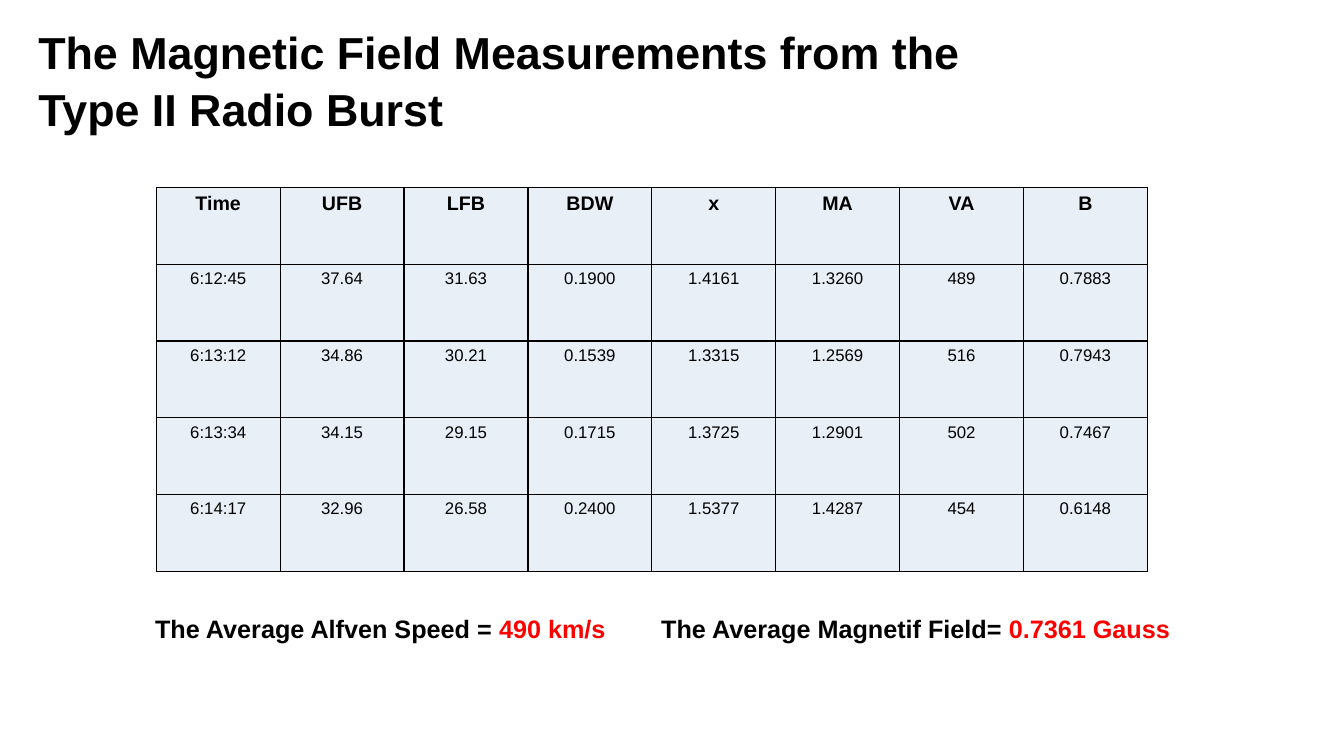
from lxml.etree import SubElement
from pptx import Presentation
from pptx.dml.color import RGBColor as Color
from pptx.enum.text import MSO_ANCHOR as Anchor, MSO_AUTO_SIZE as AutoSize, PP_ALIGN as Align
from pptx.oxml.ns import qn
from pptx.util import Inches, Pt

COLORS = {"text": "000000", "value": "FF0000", "cell": "E9EFF7", "border": "000000"}
TITLE = "The Magnetic Field Measurements from the Type II Radio Burst"
MEASUREMENTS = [
    ["Time", "UFB", "LFB", "BDW", "x", "MA", "VA", "B"],
    ["6:12:45", "37.64", "31.63", "0.1900", "1.4161", "1.3260", "489", "0.7883"],
    ["6:13:12", "34.86", "30.21", "0.1539", "1.3315", "1.2569", "516", "0.7943"],
    ["6:13:34", "34.15", "29.15", "0.1715", "1.3725", "1.2901", "502", "0.7467"],
    ["6:14:17", "32.96", "26.58", "0.2400", "1.5377", "1.4287", "454", "0.6148"],
]


class SlideBuilder:
    """Holds the style and the current slide."""

    font_name = "Arial"

    def __init__(self, slide):
        self.slide = slide

    def style(self, font, size, bold, color="text"):
        font.name = self.font_name
        font.size = Pt(size)
        font.bold = bold
        font.color.rgb = Color.from_string(COLORS[color])

    def title(self, text, left, top, width, height):
        shape = self.slide.shapes.title
        shape.left, shape.top = Inches(left), Inches(top)
        shape.width, shape.height = Inches(width), Inches(height)
        frame = shape.text_frame
        frame.text = text
        frame.word_wrap = True
        frame.auto_size = AutoSize.NONE
        frame.vertical_anchor = Anchor.TOP
        paragraph = frame.paragraphs[0]
        paragraph.alignment = Align.LEFT
        paragraph.line_spacing = 1.05
        self.style(paragraph.font, 32, True)

    def border(self, cell, width=0.96):
        properties = cell._tc.get_or_add_tcPr()
        for position, side in enumerate(("lnL", "lnR", "lnT", "lnB")):
            line = SubElement(properties, qn(f"a:{side}"), w=str(Pt(width)))
            fill = SubElement(line, qn("a:solidFill"))
            SubElement(fill, qn("a:srgbClr"), val=COLORS["border"])
            # Border lines come before the cell fill
            properties.insert(position, line)

    def table(self, rows, left, top, width, height):
        frame = self.slide.shapes.add_table(
            len(rows), len(rows[0]),
            Inches(left), Inches(top), Inches(width), Inches(height))
        table = frame.table
        table.first_row = table.horz_banding = False
        for row_index, values in enumerate(rows):
            is_header = row_index == 0
            for column_index, value in enumerate(values):
                cell = table.cell(row_index, column_index)
                cell.text = value
                cell.margin_left = cell.margin_right = Inches(0.01)
                cell.fill.solid()
                cell.fill.fore_color.rgb = Color.from_string(COLORS["cell"])
                self.border(cell)
                paragraph = cell.text_frame.paragraphs[0]
                paragraph.alignment = Align.CENTER
                self.style(paragraph.font, 14 if is_header else 12, is_header)

    def result(self, label, value, left, top, width, height):
        box = self.slide.shapes.add_textbox(
            Inches(left), Inches(top), Inches(width), Inches(height))
        box.text_frame.word_wrap = True
        paragraph = box.text_frame.paragraphs[0]
        self.style(paragraph.font, 18, True)
        paragraph.add_run().text = label
        value_run = paragraph.add_run()
        value_run.text = value
        value_run.font.color.rgb = Color.from_string(COLORS["value"])


def main():
    presentation = Presentation()
    presentation.slide_width, presentation.slide_height = Inches(13.33), Inches(7.5)
    title_only = presentation.slide_layouts[5]
    builder = SlideBuilder(presentation.slides.add_slide(title_only))

    # Heading
    builder.title(TITLE, 0.28, 0.17, 9.63, 1.16)

    # Measurements
    builder.table(MEASUREMENTS, 1.55, 1.86, 9.83, 3.81)

    # Averages
    builder.result("The Average Alfven Speed = ", "490 km/s", 1.44, 6.04, 5.02, 0.4)
    builder.result("The Average Magnetif Field= ", "0.7361 Gauss", 6.46, 6.04, 5.29, 0.4)

    presentation.save("out.pptx")


if __name__ == "__main__":
    main()
